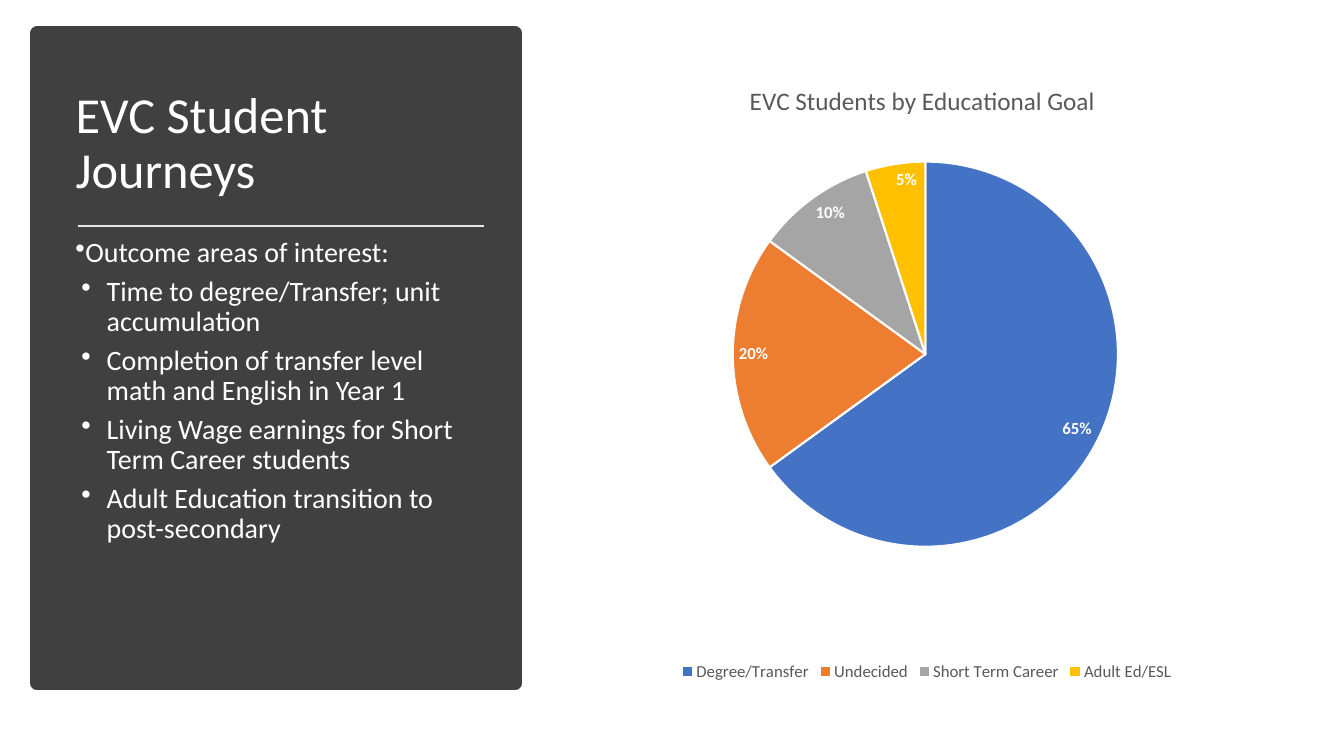
"""Build the EVC Student Journeys slide with its goal pie chart."""
import pptx
import pptx.chart.data
import pptx.dml.color
import pptx.enum.chart
import pptx.enum.shapes
import pptx.enum.text
import pptx.oxml
import pptx.oxml.ns
import pptx.util
from lxml import etree

Pt = pptx.util.Pt
FONT = "Calibri"
TITLE = "EVC Student Journeys"
LEAD = "Outcome areas of interest:"
AREAS = [
    "Time to degree/Transfer; unit accumulation",
    "Completion of transfer level math and English in Year 1",
    "Living Wage earnings for Short Term Career students",
    "Adult Education transition to post-secondary",
]
HEAD = "EVC Students by Educational Goal"
GOALS = [
    ("Degree/Transfer", 0.65, "blue"),
    ("Undecided", 0.2, "orange"),
    ("Short Term Career", 0.1, "silver"),
    ("Adult Ed/ESL", 0.05, "gold"),
]
COLORS = {
    "panel": "404040", "white": "FFFFFF", "rule": "E7E6E6", "text": "595959",
    "blue": "4472C4", "orange": "ED7D31", "silver": "A5A5A5", "gold": "FFC000",
}
PANEL = (26.64, 23.76, 341.28, 464.4)
TITLE_BOX = (46.8, 50.4, 300.96, 105.84)
RULE = (55.44, 161.28, 345.6, 161.28)
BODY_BOX = (46.8, 167.04, 300.96, 297.36)
CHART_BOX = (402.48, 38.16, 519.12, 451.44)
PLOT = {"x": 0.233, "y": 0.145, "w": 0.53, "h": 0.662}
HEAD_SPOT = {"x": 0.25, "y": 0.04}


def points(box):
    """Turn plain numbers into point lengths."""
    return [Pt(value) for value in box]


def color(name):
    """Look up a named colour."""
    return pptx.dml.color.RGBColor.from_string(COLORS[name])


def style(font, size, name, bold=False):
    """Set the face, size and colour of a font."""
    font.name, font.size, font.bold = FONT, Pt(size), bold
    font.color.rgb = color(name)


def bullet(para, left):
    """Give a paragraph a round bullet and a hanging indent."""
    props = para._p.get_or_add_pPr()
    props.set("marL", str(Pt(left)))
    props.set("indent", str(Pt(-18)))
    mark = etree.SubElement(props, pptx.oxml.ns.qn("a:buChar"))
    mark.set("char", "•")


def place(parent, spot, inner=False):
    """Fix a chart part at fractions of the chart space."""
    tag = pptx.oxml.ns.qn
    for old in parent.findall(tag("c:layout")):
        parent.remove(old)
    layout = etree.Element(tag("c:layout"))
    manual = etree.SubElement(layout, tag("c:manualLayout"))
    if inner:
        etree.SubElement(manual, tag("c:layoutTarget")).set("val", "inner")
    for key in "xy":
        etree.SubElement(manual, tag(f"c:{key}Mode")).set("val", "edge")
    for key, value in spot.items():
        etree.SubElement(manual, tag(f"c:{key}")).set("val", str(value))
    parent.insert(0 if inner else 1, layout)


def add_panel(slide):
    """Draw the dark panel behind the title and the rule below it."""
    panel = slide.shapes.add_shape(
        pptx.enum.shapes.MSO_SHAPE.RECTANGLE, *points(PANEL))
    panel.shadow.inherit = False
    panel.fill.solid()
    panel.fill.fore_color.rgb = color("panel")
    panel.line.color.rgb = color("panel")
    panel.line.width = Pt(10)
    slide.shapes._spTree.insert(2, panel._element)
    rule = slide.shapes.add_connector(
        pptx.enum.shapes.MSO_CONNECTOR.STRAIGHT, *points(RULE))
    rule.line.color.rgb = color("rule")
    rule.line.width = Pt(1.75)
    etree.SubElement(rule._element.spPr, pptx.oxml.ns.qn("a:effectLst"))


def add_text(slide):
    """Fill the title and the bulleted list."""
    title = slide.shapes.title
    title.left, title.top, title.width, title.height = points(TITLE_BOX)
    title.text_frame.text = TITLE
    title.text_frame.vertical_anchor = pptx.enum.text.MSO_ANCHOR.MIDDLE
    para = title.text_frame.paragraphs[0]
    para.alignment = pptx.enum.text.PP_ALIGN.LEFT
    para.line_spacing = 0.9
    style(para.font, 36, "white")
    frame = slide.shapes.add_textbox(*points(BODY_BOX)).text_frame
    frame.word_wrap = True
    frame.text = "\n".join([LEAD, *AREAS])
    for index, para in enumerate(frame.paragraphs):
        bullet(para, 22.32 if index else 0)
        para.line_spacing = 0.9
        para.space_after = Pt(6)
        style(para.font, 20, "white")


def add_pie(slide):
    """Draw the pie of educational goals."""
    data = pptx.chart.data.CategoryChartData(number_format="0%")
    data.categories = [goal for goal, share, fill in GOALS]
    data.add_series("Series 1", [share for goal, share, fill in GOALS])
    chart = slide.shapes.add_chart(
        pptx.enum.chart.XL_CHART_TYPE.PIE, *points(CHART_BOX), data).chart
    style(chart.font, 10, "text")
    chart.has_title = True
    chart.chart_title.include_in_layout = False
    head = chart.chart_title.text_frame
    head.text = HEAD
    style(head.paragraphs[0].font, 18, "text")
    place(chart.chart_title._element, HEAD_SPOT)
    chart.has_legend = True
    chart.legend.position = pptx.enum.chart.XL_LEGEND_POSITION.BOTTOM
    chart.legend.include_in_layout = False
    style(chart.legend.font, 12, "text")
    pie = chart.plots[0]
    pie.vary_by_categories = True
    place(chart._chartSpace.chart.plotArea, PLOT, inner=True)
    for index, (goal, share, fill) in enumerate(GOALS):
        shape = pie.series[0].points[index].format
        shape.fill.solid()
        shape.fill.fore_color.rgb = color(fill)
        shape.line.color.rgb = color("white")
        shape.line.width = Pt(1.5)
    labels = pie.series[0].data_labels
    labels.show_value = True
    labels.show_percentage = False
    labels.number_format = "0%"
    labels.number_format_is_linked = False
    labels.position = pptx.enum.chart.XL_LABEL_POSITION.INSIDE_END
    style(labels.font, 12, "white", bold=True)


def main():
    """Build and save the slide."""
    deck = pptx.Presentation()
    deck.slide_width, deck.slide_height = Pt(960), Pt(540)
    slide = deck.slides.add_slide(deck.slide_layouts[5])
    add_panel(slide)
    add_text(slide)
    add_pie(slide)
    deck.save("out.pptx")


if __name__ == "__main__":
    main()
